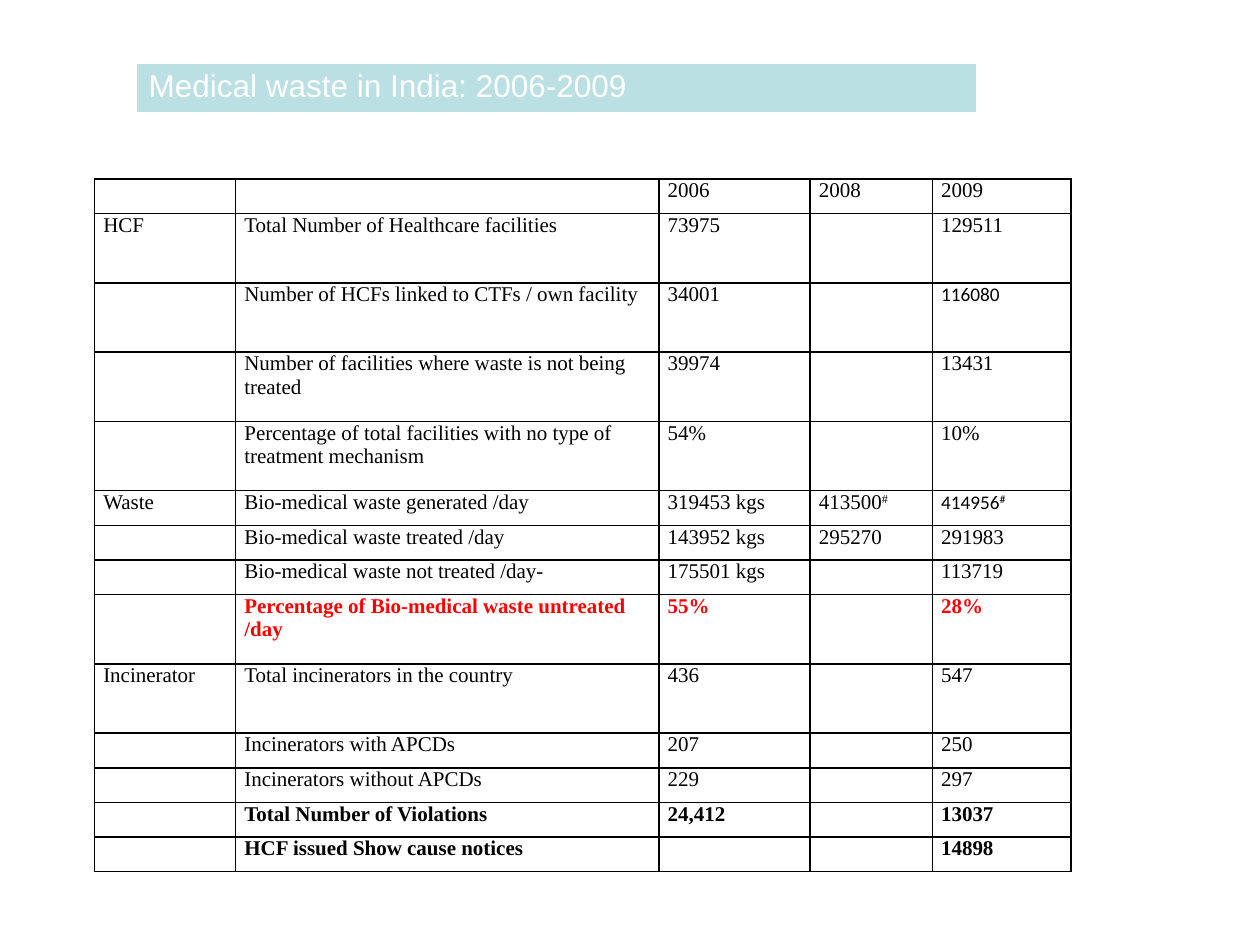
from lxml.etree import SubElement
from pptx import Presentation
from pptx.dml.color import RGBColor
from pptx.oxml.ns import qn
from pptx.util import Inches, Pt

SERIF = "Times New Roman"
WIDTHS = [1.12, 3.36, 1.2, 0.97, 1.1]
TALL = {1, 2, 3, 4, 8, 9}
RED = {8}
BOLD = {8, 12, 13}
SANS = {(2, 4), (5, 4)}
ROWS = [
    ["", "", "2006", "2008", "2009"],
    ["HCF", "Total Number of Healthcare facilities", "73975", "", "129511"],
    ["", "Number of HCFs linked to CTFs / own facility", "34001", "", "116080"],
    ["", "Number of facilities where waste is not being treated", "39974", "", "13431"],
    ["", "Percentage of total facilities with no type of treatment mechanism",
     "54%", "", "10%"],
    ["Waste", "Bio-medical waste generated /day", "319453 kgs", "413500#", "414956#"],
    ["", "Bio-medical waste treated /day", "143952 kgs", "295270", "291983"],
    ["", "Bio-medical waste not treated /day-", "175501 kgs", "", "113719"],
    ["", "Percentage of Bio-medical waste untreated /day", "55%", "", "28%"],
    ["Incinerator", "Total incinerators in the country", "436", "", "547"],
    ["", "Incinerators with APCDs", "207", "", "250"],
    ["", "Incinerators without APCDs", "229", "", "297"],
    ["", "Total Number of Violations", "24,412", "", "13037"],
    ["", "HCF issued Show cause notices", "", "", "14898"],
]


def color(code):
    """Turn a hex string into a colour."""
    return RGBColor.from_string(code)


def border(cell, code, bottom=1):
    """Line all four sides of a cell, the bottom one at its own width."""
    props = cell._tc.get_or_add_tcPr()
    for side, width in (("L", 1), ("R", 1), ("T", 1), ("B", bottom)):
        line = SubElement(props, qn(f"a:ln{side}"), w=str(Pt(width)))
        fill = SubElement(line, qn("a:solidFill"))
        SubElement(fill, qn("a:srgbClr"), val=code)


def write(para, text, size, face, code, bold=False, raised=False):
    """Add one formatted run to a paragraph."""
    run = para.add_run()
    run.text = text
    font = run.font
    font.size, font.name, font.bold = Pt(size), face, bold
    font.color.rgb = color(code)
    if raised:
        run._r.get_or_add_rPr().set("baseline", "30000")


def grid(slide, box, rows, cols):
    """Add a table without banding or a header style."""
    table = slide.shapes.add_table(rows, cols, *map(Inches, box)).table
    table.first_row = table.horz_banding = False
    return table


def banner(slide, box):
    """Place the heading band."""
    cell = grid(slide, box, 1, 1).cell(0, 0)
    border(cell, "FFFFFF", 3)
    cell.fill.solid()
    cell.fill.fore_color.rgb = color("BBE0E3")
    write(cell.text_frame.paragraphs[0], "Medical waste in India: 2006-2009",
          18, "Arial", "FFFFFF")


def entry(cell, text, row, col):
    """Format and fill one cell of the data table."""
    cell.margin_left = cell.margin_right = Inches(0.07)
    cell.margin_top = cell.margin_bottom = 0
    border(cell, "000000")
    cell.fill.background()
    para = cell.text_frame.paragraphs[0]
    if not text:
        SubElement(para._p, qn("a:endParaRPr"), sz="1200")
        return
    size, face = (11, "Calibri") if (row, col) in SANS else (12, SERIF)
    code = "FF0000" if row in RED else "000000"
    main, mark, _ = text.partition("#")
    write(para, main, size, face, code, row in BOLD)
    if mark:
        write(para, mark, size, face, code, raised=True)


def figures(slide, box):
    """Place the data table, tall rows being twice the height of short ones."""
    table = grid(slide, box, len(ROWS), len(WIDTHS))
    unit = Inches(box[3]) // (len(ROWS) + len(TALL))
    for col, width in zip(table.columns, WIDTHS):
        col.width = Inches(width)
    for r, texts in enumerate(ROWS):
        table.rows[r].height = unit * (2 if r in TALL else 1)
        for c, text in enumerate(texts):
            entry(table.cell(r, c), text, r, c)


def main():
    """Build and save the slide."""
    deck = Presentation()
    deck.slide_width, deck.slide_height = Inches(10), Inches(7.5)
    slide = deck.slides.add_slide(deck.slide_layouts[6])
    figures(slide, (0.75, 1.42, 7.75, 5.5))
    banner(slide, (1.08, 0.5, 6.67, 0.41))
    deck.save("out.pptx")


if __name__ == "__main__":
    main()
